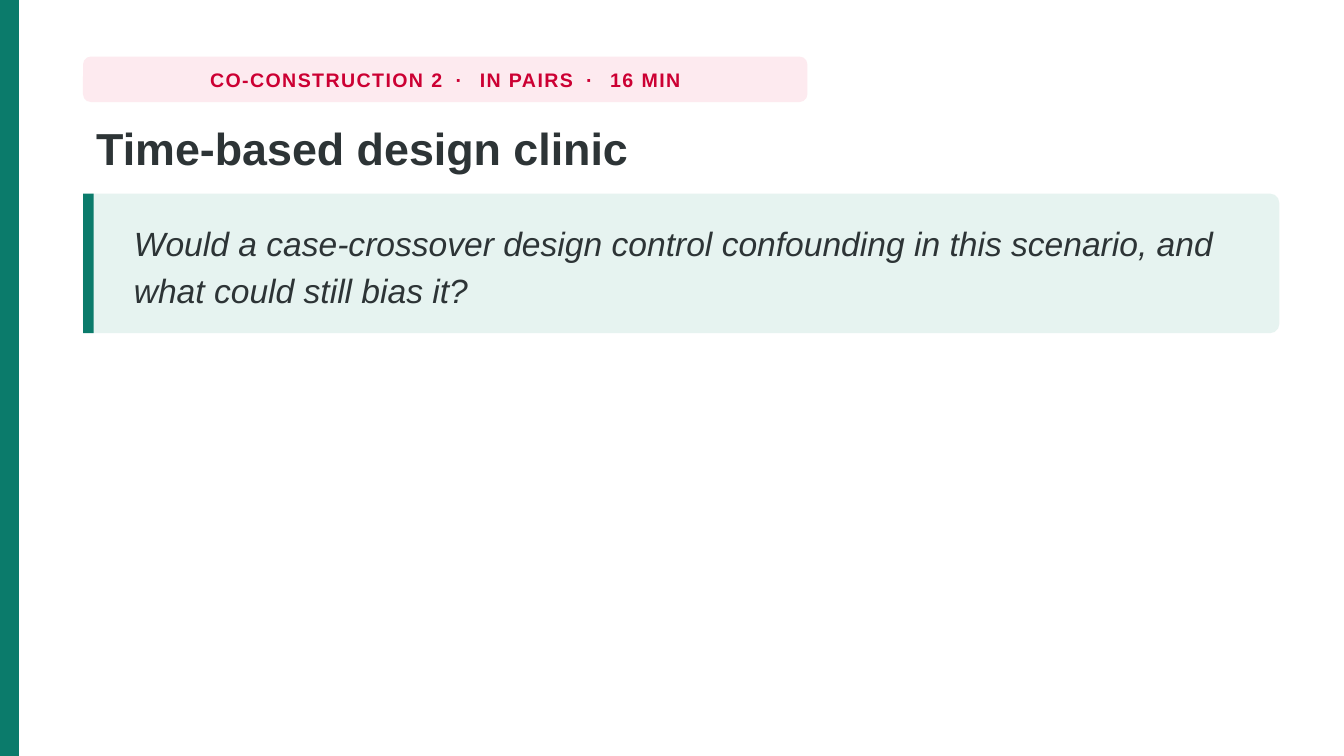
import pptx
import pptx.dml.color
import pptx.enum.shapes
import pptx.enum.text
import pptx.util

Cm = pptx.util.Cm
SHAPE = pptx.enum.shapes.MSO_SHAPE
ANCHOR = pptx.enum.text.MSO_ANCHOR
ALIGN = pptx.enum.text.PP_ALIGN

GREEN, MINT, PINK, RED, INK = "0B7B6B", "E6F3F0", "FDEAEF", "CC0033", "2D3436"
SLIDE_W, SLIDE_H = 25.4, 14.29
LEFT, CONTENT_W = 1.57, 22.61


def rgb(color):
    return pptx.dml.color.RGBColor.from_string(color)


def add_block(s, x, y, w, h, color, radius=0):
    kind = SHAPE.ROUNDED_RECTANGLE if radius else SHAPE.RECTANGLE
    sp = s.shapes.add_shape(kind, Cm(x), Cm(y), Cm(w), Cm(h))
    if radius:
        sp.adjustments[0] = radius / min(w, h)
    sp.shadow.inherit = False
    sp.fill.solid()
    sp.fill.fore_color.rgb = rgb(color)
    sp.line.fill.background()


def add_text(s, x, y, w, h, *texts, size, color=INK, bold=False, italic=False,
             align=ALIGN.LEFT, anchor=ANCHOR.TOP, line=None, wrap=True, tracking=(0,)):
    """Put the texts in one paragraph, a run each, cycling through tracking (points)."""
    tf = s.shapes.add_textbox(Cm(x), Cm(y), Cm(w), Cm(h)).text_frame
    tf.word_wrap = wrap
    tf.vertical_anchor = anchor
    p = tf.paragraphs[0]
    p.alignment = align
    p.line_spacing = line
    for i, text in enumerate(texts):
        r = p.add_run()
        r.text = text
        r.font.name = "Arial"
        r.font.size = pptx.util.Pt(size)
        r.font.bold = bold
        r.font.italic = italic
        r.font.color.rgb = rgb(color)
        spacing = tracking[i % len(tracking)]
        if spacing:
            r.font._element.set("spc", str(round(spacing * 100)))


def add_activity_tag(s, x, y, w, h, *labels):
    """Draw the tag, its labels parted by widely tracked dots."""
    add_block(s, x, y, w, h, PINK, radius=0.15)
    texts = [labels[0]]
    for label in labels[1:]:
        texts += [" · ", label]
    add_text(s, x, y, w, h, *texts, size=10.5, color=RED, bold=True, wrap=False,
             align=ALIGN.CENTER, anchor=ANCHOR.MIDDLE, tracking=(0.8, 3.25))


def add_question(s, x, y, w, h, question):
    add_block(s, x, y, w, h, MINT, radius=0.18)
    add_block(s, x, y, 0.2, h, GREEN)
    add_text(s, x + 0.71, y + 0.13, w - 1.4, h - 0.26, question, size=18,
             italic=True, anchor=ANCHOR.MIDDLE, line=1.16)


def main():
    prs = pptx.Presentation()
    prs.slide_width, prs.slide_height = Cm(SLIDE_W), Cm(SLIDE_H)
    s = prs.slides.add_slide(prs.slide_layouts[6])
    add_block(s, 0, 0, 0.36, SLIDE_H, GREEN)
    add_activity_tag(s, LEFT, 1.07, 13.69, 0.86,
                     "CO-CONSTRUCTION 2", "IN PAIRS", "16 MIN")
    add_text(s, LEFT, 2.13, CONTENT_W, 1.42, "Time-based design clinic",
             size=24, bold=True, line=1.02)
    add_question(s, LEFT, 3.66, CONTENT_W, 2.64,
                 "Would a case-crossover design control confounding in this "
                 "scenario, and what could still bias it?")
    prs.save("out.pptx")


if __name__ == "__main__":
    main()
